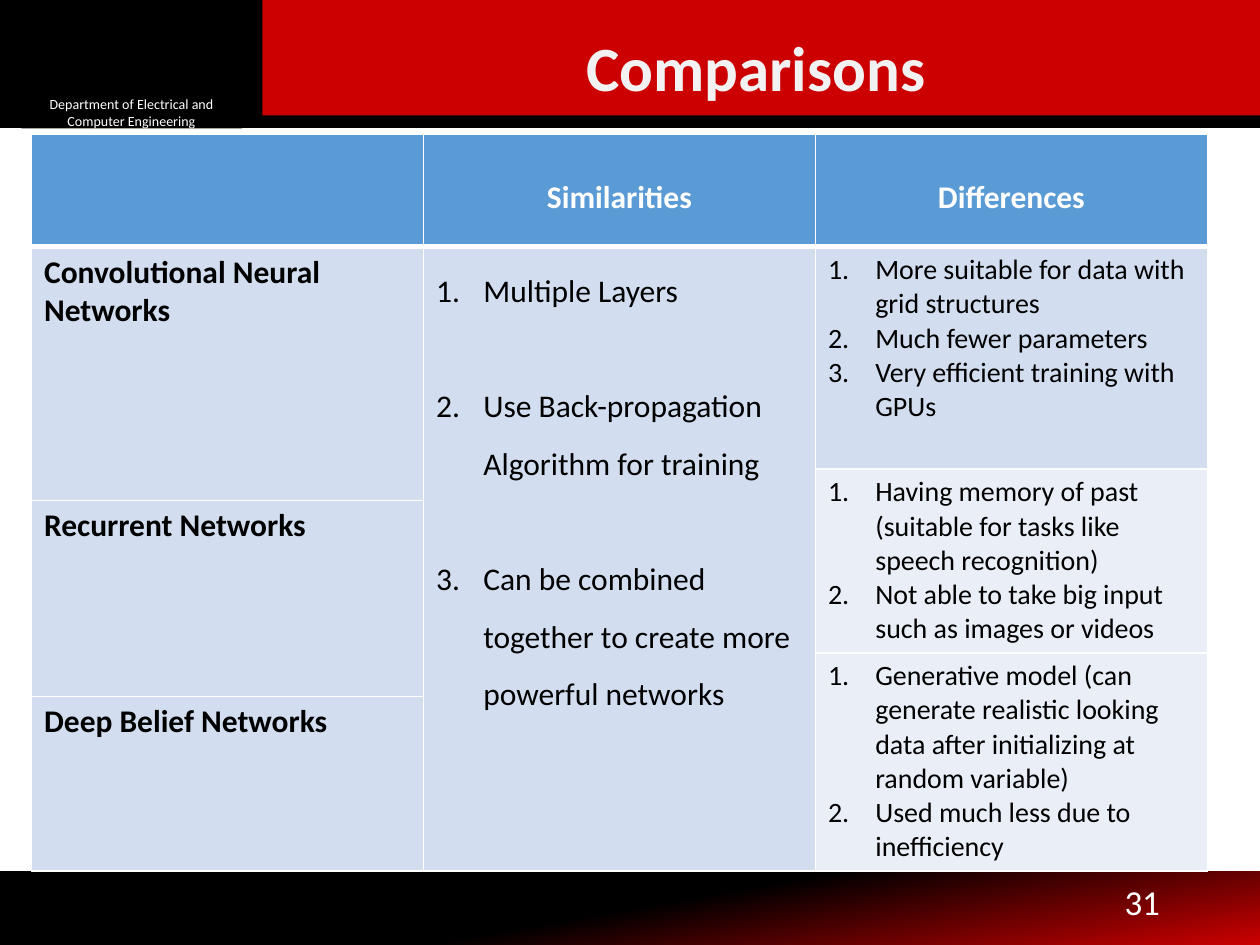
from dataclasses import dataclass

from lxml.etree import SubElement
from pptx import Presentation
from pptx.dml.color import RGBColor as Rgb
from pptx.enum.shapes import MSO_SHAPE as Shape
from pptx.enum.text import MSO_ANCHOR as Anchor, MSO_AUTO_SIZE as AutoSize, PP_ALIGN as Align
from pptx.oxml.ns import qn
from pptx.util import Pt


@dataclass(frozen=True)
class Theme:
    font: str = "Calibri"
    black: str = "000000"
    red: str = "CC0000"
    white: str = "FFFFFF"
    title: str = "F2F2F2"
    header: str = "5B9BD5"
    band: str = "D2DEEF"
    pale: str = "EAEFF7"
    title_size: int = 36
    page_size: int = 20
    head_size: int = 18
    list_size: int = 16
    label_size: int = 8


class SlideBuilder:
    def __init__(self, slide, theme):
        self.slide = slide
        self.theme = theme

    def style(self, para, size, color, bold=False, align=Align.LEFT):
        para.alignment = align
        for span in para.runs:
            span.font.name = self.theme.font
            span.font.size = Pt(size)
            span.font.bold = bold
            span.font.color.rgb = Rgb.from_string(color)

    def rect(self, left, top, width, height, color=None, line=None):
        box = self.slide.shapes.add_shape(
            Shape.RECTANGLE, Pt(left), Pt(top), Pt(width), Pt(height))
        box.shadow.inherit = False
        if color:
            box.fill.solid()
            box.fill.fore_color.rgb = Rgb.from_string(color)
        if line:
            box.line.color.rgb = Rgb.from_string(line)
            box.line.width = Pt(1)
        else:
            box.line.fill.background()
        return box

    def gradient_rect(self, left, top, width, height, stops, angle):
        box = self.rect(left, top, width, height)
        box.fill.gradient()
        box.fill.gradient_angle = angle
        for stop, (position, color) in zip(box.fill.gradient_stops, stops):
            stop.position = position
            stop.color.rgb = Rgb.from_string(color)

    def set_text(self, box, text, size, color, align, bold=False):
        frame = box.text_frame
        frame.text = text
        frame.word_wrap = True
        frame.auto_size = AutoSize.NONE
        frame.vertical_anchor = Anchor.MIDDLE
        self.style(frame.paragraphs[0], size, color, bold, align)

    def text(self, left, top, width, height, *content):
        box = self.slide.shapes.add_textbox(Pt(left), Pt(top), Pt(width), Pt(height))
        self.set_text(box, *content)

    def title(self, left, top, width, height, text):
        box = self.slide.shapes.title
        box.left, box.top, box.width, box.height = map(Pt, (left, top, width, height))
        self.set_text(box, text, self.theme.title_size, self.theme.title, Align.CENTER, True)
        # Bring the title in front of the banner
        self.slide.shapes.element.append(box.element)

    def table(self, left, top, column_widths, row_heights):
        frame = self.slide.shapes.add_table(
            len(row_heights), len(column_widths), Pt(left), Pt(top),
            Pt(sum(column_widths)), Pt(sum(row_heights)))
        table = frame.table
        table.horz_banding = False
        for column, width in zip(table.columns, column_widths):
            column.width = Pt(width)
        for row, height in zip(table.rows, row_heights):
            row.height = Pt(height)
        return table

    def paint_cell(self, cell, color, bottom=1):
        properties = cell._tc.get_or_add_tcPr()
        for side, width in (("L", 1), ("R", 1), ("T", 1), ("B", bottom)):
            border = SubElement(properties, qn(f"a:ln{side}"), w=str(Pt(width)))
            fill = SubElement(border, qn("a:solidFill"))
            SubElement(fill, qn("a:srgbClr"), val=self.theme.white)
        cell.fill.solid()
        cell.fill.fore_color.rgb = Rgb.from_string(color)

    def numbered(self, cell, items, size, line_spacing=1.0, gap=0):
        frame = cell.text_frame
        frame.text = "\n".join(items)
        for para in frame.paragraphs:
            properties = para._p.get_or_add_pPr()
            properties.set("marL", str(Pt(27)))
            properties.set("indent", str(Pt(-27)))
            SubElement(properties, qn("a:buFont"), typeface="+mj-lt")
            SubElement(properties, qn("a:buAutoNum"), type="arabicPeriod")
            para.line_spacing = line_spacing
            para.space_after = Pt(gap)
            self.style(para, size, self.theme.black)


def main():
    deck = Presentation()
    deck.slide_width, deck.slide_height = Pt(720), Pt(540)
    theme = Theme()
    page = SlideBuilder(deck.slides.add_slide(deck.slide_layouts[5]), theme)

    # Footer and banner
    page.gradient_rect(0, 498, 720, 42, ((0.5, theme.black), (1, theme.red)), 280)
    page.rect(0, 0.7, 720, 72, theme.black, theme.black)
    label = page.rect(12.2, 55.4, 126, 18, theme.black)
    page.set_text(label, "Department of Electrical and Computer Engineering",
                  theme.label_size, theme.white, Align.CENTER)
    page.rect(150, 0, 570, 66, theme.red)

    # Comparison grid
    table = page.table(18, 76.5, [224] * 3, [64.5, 127, 18, 87, 25, 99])
    for row in range(6):
        for column in range(3):
            if row == 0:
                color = theme.header
            else:
                color = theme.pale if column == 2 and row > 1 else theme.band
            page.paint_cell(table.cell(row, column), color, 3 if row == 0 else 1)
    for first, last, column in ((1, 2, 0), (3, 4, 0), (1, 5, 1), (2, 3, 2), (4, 5, 2)):
        table.cell(first, column).merge(table.cell(last, column))

    # Column headings
    for column, heading in enumerate(("Similarities", "Differences"), start=1):
        cell = table.cell(0, column)
        cell.text_frame.text = heading
        cell.margin_top = Pt(25.5)
        page.style(cell.text_frame.paragraphs[0], theme.head_size, theme.white,
                   True, Align.CENTER)

    # Network names
    for row, name in ((1, "Convolutional Neural Networks"),
                      (3, "Recurrent Networks"),
                      (5, "Deep Belief Networks")):
        frame = table.cell(row, 0).text_frame
        frame.text = name
        page.style(frame.paragraphs[0], theme.head_size, theme.black, True)

    # Similarities and differences
    page.numbered(table.cell(1, 1), (
        "Multiple Layers",
        "Use Back-propagation Algorithm for training",
        "Can be combined together to create more powerful networks",
    ), theme.head_size, line_spacing=1.5, gap=33)
    differences = {
        1: ("More suitable for data with grid structures",
            "Much fewer parameters",
            "Very efficient training with GPUs"),
        2: ("Having memory of past (suitable for tasks like speech recognition)",
            "Not able to take big input such as images or videos"),
        4: ("Generative model (can generate realistic looking data after "
            "initializing at random variable)",
            "Used much less due to inefficiency"),
    }
    for row, items in differences.items():
        page.numbered(table.cell(row, 2), items, theme.list_size)

    # Title and page number
    page.title(174, 14, 516, 48, "Comparisons")
    page.text(508, 500.5, 162, 29, "31", theme.page_size, theme.white, Align.RIGHT)

    deck.save("out.pptx")


if __name__ == "__main__":
    main()
